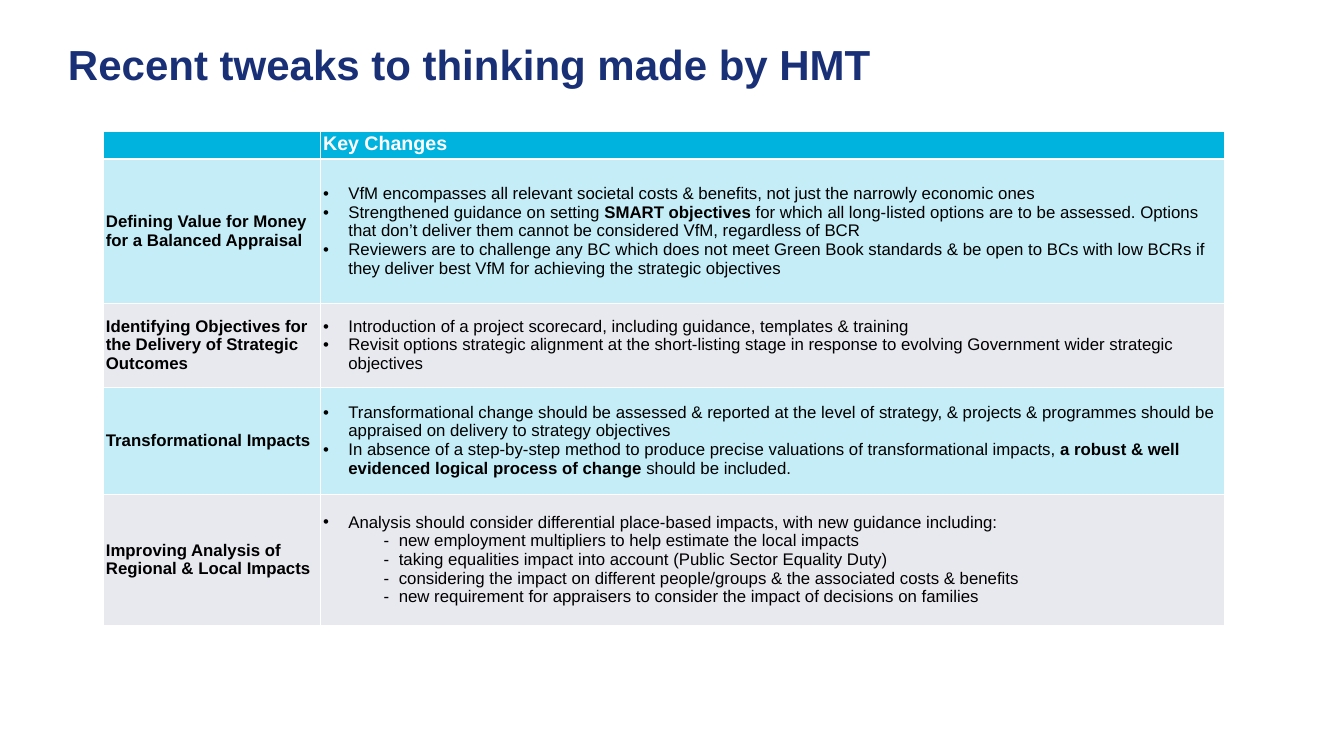
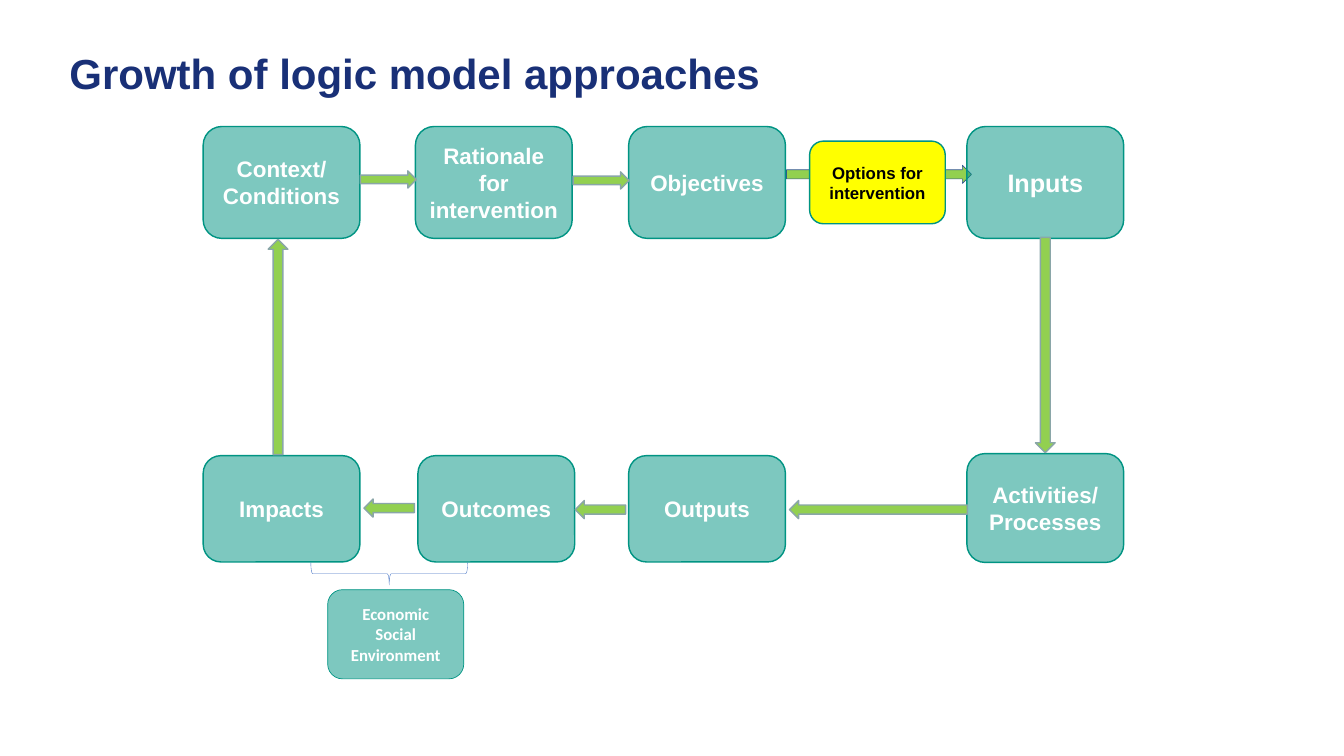
from lxml.etree import SubElement
from pptx import Presentation
from pptx.dml.color import RGBColor
from pptx.enum.shapes import MSO_SHAPE
from pptx.enum.text import MSO_ANCHOR, PP_ALIGN
from pptx.oxml.ns import qn
from pptx.util import Inches, Pt

NAVY, CYAN, GREY, WHITE, BLACK = "193077", "00B3DE", "E8E8EF", "FFFFFF", "000000"
TEAL, GREEN, YELLOW = "009483", "92D050", "FFFF00"
ARROW_LINE, OPTIONS_LINE, BRACE_LINE = "8AA6A8", "325491", "4472C4"

TITLE = {"size": 60, "bold": True, "color": NAVY}
HEADER = {"size": 28, "bold": True, "color": WHITE}
BODY = {"size": 24, "bold": False, "color": BLACK}
LABEL = {**BODY, "bold": True}
STAGE = {"size": 32, "bold": True, "color": WHITE}

# Each row: topic, then (bullet sign, text); ** switches bold on and off
KEY_CHANGES = [
    ("Defining Value for Money for a Balanced Appraisal", [
        ("•", "VfM encompasses all relevant societal costs & benefits, not just the narrowly "
              "economic ones"),
        ("•", "Strengthened guidance on setting **SMART objectives **for which all long-listed "
              "options are to be assessed. Options that don’t deliver them cannot be considered "
              "VfM, regardless of BCR"),
        ("•", "Reviewers are to challenge any BC which does not meet Green Book standards & be "
              "open to BCs with low BCRs if they deliver best VfM for achieving the strategic "
              "objectives")]),
    ("Identifying Objectives for the Delivery of Strategic Outcomes", [
        ("•", "Introduction of a project scorecard, including guidance, templates & training"),
        ("•", "Revisit options strategic alignment at the short-listing stage in response to "
              "evolving Government wider strategic objectives")]),
    ("Transformational Impacts", [
        ("•", "Transformational change should be assessed & reported at the level of strategy, "
              "& projects & programmes should be appraised on delivery to strategy objectives"),
        ("•", "In absence of a step-by-step method to produce precise valuations of "
              "transformational impacts, **a robust & well evidenced logical process of change "
              "**should be included.")]),
    ("Improving Analysis of Regional & Local Impacts", [
        ("•", "Analysis should consider differential place-based impacts, with new guidance "
              "including:"),
        ("-", "new employment multipliers to help estimate the local impacts"),
        ("-", "taking equalities impact into account (Public Sector Equality Duty)"),
        ("-", "considering the impact on different people/groups & the associated costs & "
              "benefits"),
        ("-", "new requirement for appraisers to consider the impact of decisions on families")]),
]
INDENTS = {"•": (0.5, -0.5), "-": (1.5, -0.3)}


def rgb(value):
    return RGBColor.from_string(value)


def write(para, text, size, bold, color, font="Arial"):
    """Add text to a paragraph; every second piece between ** marks is bold."""
    for number, piece in enumerate(text.split("**")):
        span = para.add_run()
        span.text = piece
        values = {"name": font, "size": Pt(size), "bold": bold or number % 2 == 1}
        for name, value in values.items():
            setattr(span.font, name, value)
        span.font.color.rgb = rgb(color)


def next_para(frame, index):
    return frame.add_paragraph() if index else frame.paragraphs[0]


def add_bullet(para, sign):
    left, hanging = INDENTS[sign]
    props = para._p.get_or_add_pPr()
    props.set("marL", str(Inches(left)))
    props.set("indent", str(Inches(hanging)))
    SubElement(props, qn("a:buFont"), typeface="Arial")
    SubElement(props, qn("a:buChar"), char=sign)


def paint(fill, holder, color, alpha=None):
    """Fill solidly; holder is the XML element that carries the fill."""
    fill.solid()
    fill.fore_color.rgb = rgb(color)
    if alpha:
        tint = holder.find(qn("a:solidFill")).find(qn("a:srgbClr"))
        SubElement(tint, qn("a:alpha"), val=str(alpha * 1000))


def add_title(page, text, left, top, height):
    box = page.shapes.add_textbox(Inches(left), Inches(top), Inches(24.16), Inches(height))
    box.text_frame.word_wrap = True
    para = box.text_frame.paragraphs[0]
    para.line_spacing = 0.9
    write(para, text, **TITLE)


def add_outlined(page, kind, box, line, weight, rotation=0):
    shape = page.shapes.add_shape(kind, *map(Inches, box))
    shape.shadow.inherit = False
    shape.rotation = rotation
    shape.line.color.rgb = rgb(line)
    shape.line.width = Pt(weight)
    return shape


def add_stage(page, box, lines, style=STAGE, fill=TEAL, alpha=51, weight=2):
    shape = add_outlined(page, MSO_SHAPE.ROUNDED_RECTANGLE, box, TEAL, weight)
    paint(shape.fill, shape._element.spPr, fill, alpha)
    frame = shape.text_frame
    frame.word_wrap = True
    frame.vertical_anchor = MSO_ANCHOR.MIDDLE
    for index, line in enumerate(lines):
        para = next_para(frame, index)
        para.alignment = PP_ALIGN.CENTER
        write(para, line, **style)


def add_arrow(page, box, rotation=0, line=ARROW_LINE, weight=2):
    arrow = add_outlined(page, MSO_SHAPE.RIGHT_ARROW, box, line, weight, rotation)
    paint(arrow.fill, arrow._element.spPr, GREEN)


def format_cell(cell, row, fill, alpha):
    values = {"margin_left": Inches(0.05), "margin_right": Inches(0.05),
              "margin_top": Inches(0.03), "margin_bottom": Inches(0.03),
              "vertical_anchor": MSO_ANCHOR.MIDDLE if row else MSO_ANCHOR.TOP}
    for name, value in values.items():
        setattr(cell, name, value)
    props = cell._tc.get_or_add_tcPr()
    for side in "LRTB":
        heavy = (row, side) in [(0, "B"), (1, "T")]
        border = SubElement(props, qn(f"a:ln{side}"), w=str(Pt(3 if heavy else 1)))
        SubElement(SubElement(border, qn("a:solidFill")), qn("a:srgbClr"), val=WHITE)
    paint(cell.fill, props, fill, alpha)


def add_changes_table(page, left, top, widths, heights):
    table = page.shapes.add_table(len(heights), len(widths), Inches(left), Inches(top),
                                  Inches(sum(widths)), Inches(sum(heights))).table
    for column, width in zip(table.columns, widths):
        column.width = Inches(width)
    for number, (row, height) in enumerate(zip(table.rows, heights)):
        row.height = Inches(height)
        fill, alpha = (CYAN, 23 if number else None) if number % 2 or not number else (GREY, None)
        for cell in row.cells:
            format_cell(cell, number, fill, alpha)
    write(table.cell(0, 1).text_frame.paragraphs[0], "Key Changes", **HEADER)
    for number, (topic, changes) in enumerate(KEY_CHANGES, 1):
        write(table.cell(number, 0).text_frame.paragraphs[0], topic, **LABEL)
        frame = table.cell(number, 1).text_frame
        for index, (sign, text) in enumerate(changes):
            para = next_para(frame, index)
            add_bullet(para, sign)
            write(para, text, **BODY)


def add_logic_model(page, left, top):
    """Loop of stages; all offsets run from the top left corner of the loop."""
    def at(x, y, width, height):
        return left + x, top + y, width, height

    width, upper, lower, lower_top = 3.11, 2.22, 2.11, 6.53
    add_arrow(page, at(11.57, 0.77, 3.67, 0.36), line=OPTIONS_LINE, weight=1)
    for x, lines in [(0, ["Context/", "Conditions"]), (4.21, ["Rationale for intervention"]),
                     (8.44, ["Objectives"])]:
        add_stage(page, at(x, 0, width, upper), lines)
    for x, name in [(0, "Impacts"), (4.26, "Outcomes"), (8.44, "Outputs")]:
        add_stage(page, at(x, lower_top, width, lower), [name])
    add_stage(page, at(15.15, 6.49, width, 2.16), ["Activities/", "Processes"])
    add_stage(page, at(15.15, 0, width, upper), ["Inputs"], {**STAGE, "size": 36})
    add_stage(page, at(12.03, 0.29, 2.69, 1.64), ["Options for intervention"],
              LABEL, YELLOW, None)

    for x, y in [(3.12, 0.88), (7.34, 0.9)]:
        add_arrow(page, at(x, y, 1.11, 0.34))
    for x, y, length in [(11.63, 7.42, 3.53), (7.38, 7.42, 1), (3.19, 7.39, 1)]:
        add_arrow(page, at(x, y, length, 0.36), 180)
    for x, y, rotation in [(-0.65, 4.18, 270), (14.57, 4.14, 90)]:
        add_arrow(page, at(x, y, 4.27, 0.39), rotation)

    add_stage(page, at(2.47, 9.19, 2.7, 1.77), ["Economic", "Social", "Environment"],
              {**STAGE, "size": 24, "font": "Calibri"}, weight=1)
    brace = add_outlined(page, MSO_SHAPE.RIGHT_BRACE, at(3.47, 7.32, 0.44, 3.11),
                         BRACE_LINE, 0.5, 90)
    brace.fill.background()


def main():
    deck = Presentation()
    deck.slide_width, deck.slide_height = Inches(26.66), Inches(15)
    blank = deck.slide_layouts[6]

    page = deck.slides.add_slide(blank)
    add_title(page, "Recent tweaks to thinking made by HMT", 1.25, 0.83, 1.19)
    add_changes_table(page, 2.05, 2.6, [4.31, 17.93], [0.56, 2.85, 1.67, 2.12, 2.61])

    page = deck.slides.add_slide(blank)
    add_title(page, "Growth of logic model approaches", 1.28, 1, 1.79)
    add_logic_model(page, 4.03, 2.51)

    deck.save("out.pptx")


if __name__ == "__main__":
    main()
